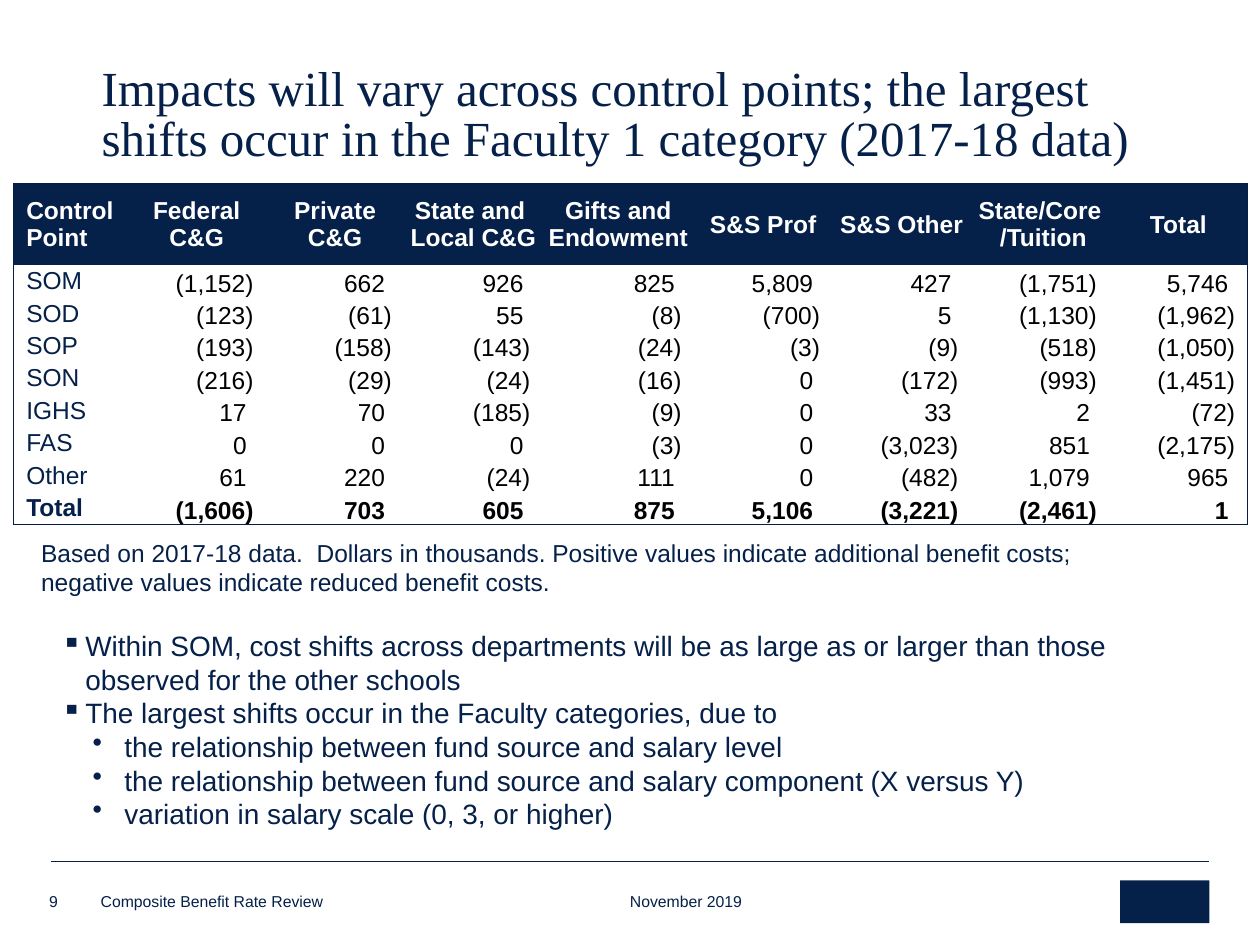
import dataclasses

import lxml.etree
import pptx
import pptx.dml.color
import pptx.enum.shapes
import pptx.enum.text
import pptx.oxml.ns
import pptx.util

Cm = pptx.util.Cm
Pt = pptx.util.Pt
qn = pptx.oxml.ns.qn
Align = pptx.enum.text.PP_ALIGN
Anchor = pptx.enum.text.MSO_ANCHOR


@dataclasses.dataclass(frozen=True)
class Theme:
    navy: str = "052049"
    edge: str = "031F49"
    white: str = "FFFFFF"
    black: str = "000000"
    serif: str = "Times New Roman"
    sans: str = "Arial"
    title: int = 28
    body: int = 16
    small: int = 14
    foot: int = 9
    rule: float = 0.25
    border: float = 0.75


HEADS = ["Control Point", "Federal C&G", "Private C&G", "State and \nLocal C&G",
         "Gifts and Endowment", "S&S Prof", "S&S Other", "State/Core\n /Tuition", "Total"]
COSTS = {
    "SOM": [-1152, 662, 926, 825, 5809, 427, -1751, 5746],
    "SOD": [-123, -61, 55, -8, -700, 5, -1130, -1962],
    "SOP": [-193, -158, -143, -24, -3, -9, -518, -1050],
    "SON": [-216, -29, -24, -16, 0, -172, -993, -1451],
    "IGHS": [17, 70, -185, -9, 0, 33, 2, -72],
    "FAS": [0, 0, 0, -3, 0, -3023, 851, -2175],
    "Other": [61, 220, -24, 111, 0, -482, 1079, 965],
    "Total": [-1606, 703, 605, 875, 5106, -3221, -2461, 1],
}
WIDTHS = [2.29, 2.79, 2.79, 2.79, 3.05, 2.79, 2.79, 2.79, 2.79]
POINTS = [
    (0, "Within SOM, cost shifts across departments will be as large as or larger "
        "than those observed for the other schools"),
    (0, "The largest shifts occur in the Faculty categories, due to"),
    (1, "the relationship between fund source and salary level"),
    (1, "the relationship between fund source and salary component (X versus Y)"),
    (1, "variation in salary scale (0, 3, or higher)"),
]
BULLETS = [("▪", 0.48, 0.48), ("•", 1.27, 0.64)]


def money(cost):
    return f"({-cost:,})" if cost < 0 else f"{cost:,} "


class Deck:
    def __init__(self, theme):
        self.theme = theme
        self.file = pptx.Presentation()
        self.file.slide_width, self.file.slide_height = Cm(25.4), Cm(19.05)
        self.slide = self.file.slides.add_slide(self.file.slide_layouts[6])

    def paint(self, code):
        return pptx.dml.color.RGBColor.from_string(code)

    def style(self, frame, size, color, face=None, bold=False, align=Align.LEFT):
        for para in frame.paragraphs:
            para.alignment = align
            for run in para.runs:
                run.font.size = Pt(size)
                run.font.name = face or self.theme.sans
                run.font.bold = bold
                run.font.color.rgb = self.paint(color)

    def text(self, words, box, size, face=None, inset=True):
        frame = self.slide.shapes.add_textbox(*map(Cm, box)).text_frame
        frame.word_wrap = True
        if not inset:
            frame.margin_left = frame.margin_right = 0
            frame.margin_top = frame.margin_bottom = 0
            frame.vertical_anchor = Anchor.BOTTOM
        frame.text = words
        self.style(frame, size, self.theme.navy, face)
        return frame

    def title(self, words, box):
        frame = self.text(words, box, self.theme.title, self.theme.serif)
        frame.paragraphs[0].line_spacing = 0.85

    def bullets(self, points, box):
        frame = self.text("\n".join(words for _, words in points), box, self.theme.body)
        for para, (level, _) in zip(frame.paragraphs, points):
            mark, left, hang = BULLETS[level]
            para.level = level
            props = para._p.get_or_add_pPr()
            props.set("marL", str(Cm(left)))
            props.set("indent", str(-Cm(hang)))
            lxml.etree.SubElement(props, qn("a:buChar"), char=mark)

    def footer(self, words, box, stop):
        frame = self.text(words, box, self.theme.foot, inset=False)
        props = frame.paragraphs[0]._p.get_or_add_pPr()
        tabs = lxml.etree.SubElement(props, qn("a:tabLst"))
        lxml.etree.SubElement(tabs, qn("a:tab"), pos=str(Cm(stop)), algn="l")

    def rule(self, left, right, top):
        line = self.slide.shapes.add_connector(
            pptx.enum.shapes.MSO_CONNECTOR.STRAIGHT, Cm(left), Cm(top), Cm(right), Cm(top))
        line.line.color.rgb = self.paint(self.theme.navy)
        line.line.width = Pt(self.theme.rule)
        lxml.etree.SubElement(line._element.spPr, qn("a:effectLst"))

    def block(self, box):
        shape = self.slide.shapes.add_shape(
            pptx.enum.shapes.MSO_SHAPE.RECTANGLE, *map(Cm, box))
        shape.shadow.inherit = False
        shape.fill.solid()
        shape.fill.fore_color.rgb = self.paint(self.theme.navy)
        shape.line.fill.background()

    def border(self, cell, sides):
        props = cell._tc.get_or_add_tcPr()
        for side in "LRTB":
            line = lxml.etree.SubElement(props, qn("a:ln" + side))
            if side in sides:
                line.set("w", str(Pt(self.theme.border)))
                fill = lxml.etree.SubElement(line, qn("a:solidFill"))
                lxml.etree.SubElement(fill, qn("a:srgbClr"), val=self.theme.edge)
            else:
                lxml.etree.SubElement(line, qn("a:noFill"))

    def cell(self, cell, words, sides, head, first, bold):
        theme = self.theme
        self.border(cell, sides)
        cell.fill.solid()
        cell.fill.fore_color.rgb = self.paint(theme.navy if head else theme.white)
        if first:
            pads, align = (0.25, 0.03, 0.03), Align.LEFT
        elif head:
            pads, align = (0.03, 0.03, 0.03), Align.CENTER
        else:
            pads, align = (0.03 if "R" in sides else 0.25, 0.25, 0), Align.RIGHT
        cell.margin_left, cell.margin_right, cell.margin_top = map(Cm, pads)
        cell.margin_bottom = cell.margin_top
        cell.vertical_anchor = Anchor.MIDDLE if head or first else Anchor.BOTTOM
        cell.text_frame.text = words
        color = theme.white if head else theme.navy if first else theme.black
        self.style(cell.text_frame, theme.small, color, bold=bold, align=align)

    def table(self, rows, left, top, tall, short):
        last, end = len(rows) - 1, len(WIDTHS) - 1
        table = self.slide.shapes.add_table(
            len(rows), len(WIDTHS), Cm(left), Cm(top),
            Cm(sum(WIDTHS)), Cm(tall + short * last)).table
        table.first_row = table.horz_banding = False
        for col, width in zip(table.columns, WIDTHS):
            col.width = Cm(width)
        for r, row in enumerate(rows):
            table.rows[r].height = Cm(short if r else tall)
            for c, words in enumerate(row):
                sides = (("L" if c == 0 else "") + ("R" if c == end else "")
                         + ("T" if r == 0 else "") + ("B" if r == last else ""))
                self.cell(table.cell(r, c), words, sides, r == 0, c == 0, r in (0, last))


def main():
    theme = Theme()
    deck = Deck(theme)
    deck.rule(1.02, 24.38, 17.37)
    deck.block((22.58, 17.75, 1.8, 0.86))
    deck.title("Impacts will vary across control points; the largest shifts occur "
               "in the Faculty 1 category (2017-18 data)", (1.8, 1.22, 22.48, 2.31))
    deck.text("9", (0.99, 17.93, 0.69, 0.43), theme.foot, inset=False)
    rows = [HEADS] + [[name, *map(money, costs)] for name, costs in COSTS.items()]
    deck.table(rows, 0.28, 3.71, 1.63, 0.6)
    deck.bullets(POINTS, (0.99, 12.55, 22.05, 5.05))
    deck.text("Based on 2017-18 data.  Dollars in thousands. Positive values indicate "
              "additional benefit costs; negative values indicate reduced benefit costs.",
              (0.58, 10.72, 22.86, 1.45), theme.small)
    deck.footer("Composite Benefit Rate Review\tNovember 2019", (2.03, 17.98, 19.66, 0.38), 10.67)
    deck.file.save("out.pptx")


if __name__ == "__main__":
    main()
